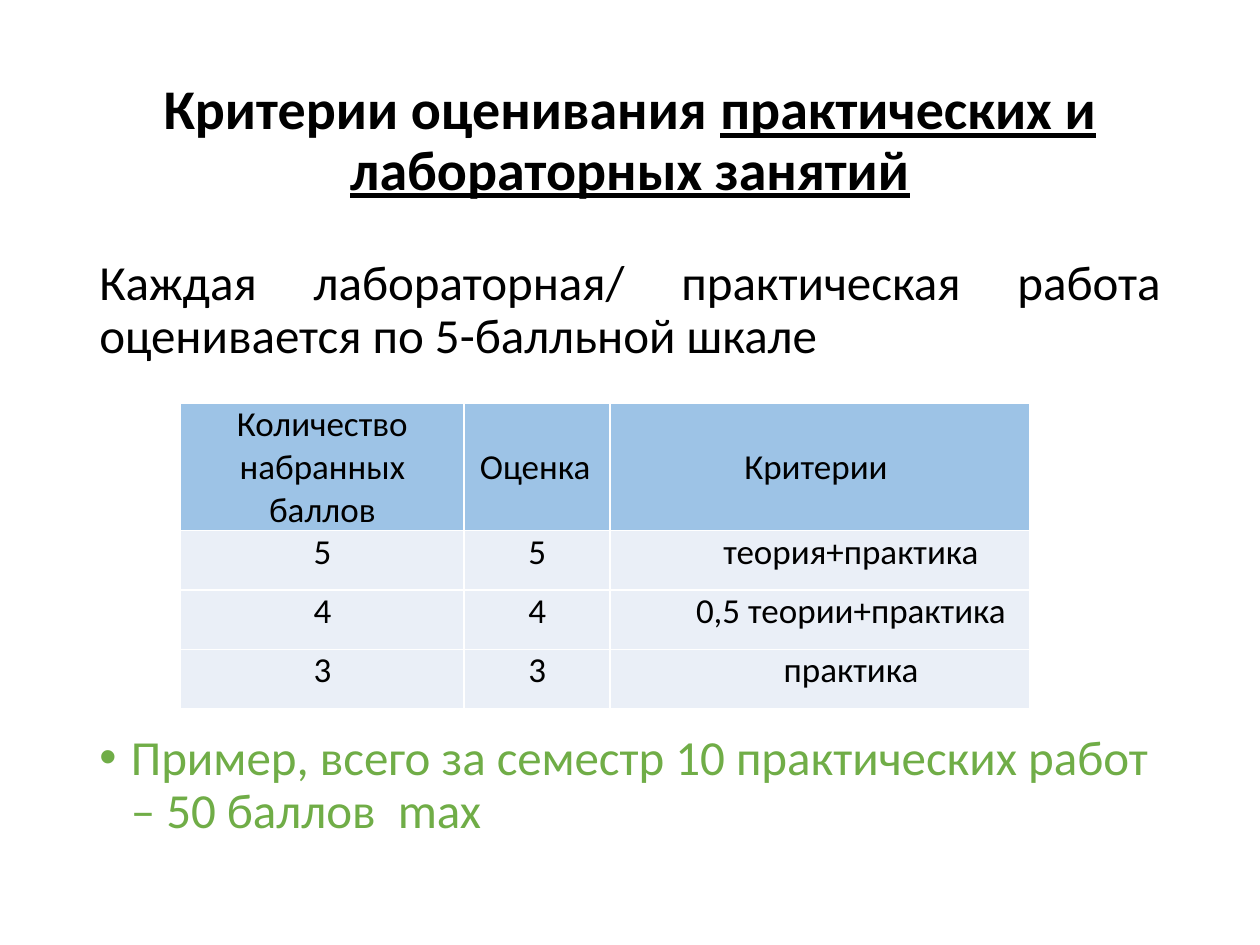
from lxml.etree import SubElement as Sub
from pptx import Presentation
from pptx.dml.color import RGBColor as Rgb
from pptx.enum.text import MSO_ANCHOR as Anchor, PP_ALIGN as Align
from pptx.oxml.ns import qn
from pptx.util import Pt

COLORS = {
    "text": "000000",
    "note": "70AD47",
    "head": "9DC3E6",
    "row": "EAEFF7",
    "line": "FFFFFF",
}
ROWS = [
    ("Количество набранных баллов", " Оценка", "Критерии "),
    ("5", "5", "теория+практика"),
    ("4", "4", "0,5 теории+практика"),
    ("3", "3", "практика"),
]
WIDTHS = (162, 83.5, 239.8)
HEIGHTS = (72.7, 33.9, 33.9, 33.9)


def style(par, size, color="text", align=Align.LEFT, bold=False):
    par.alignment = align
    font = par.font
    font.name, font.size, font.bold = "Calibri", Pt(size), bold
    font.color.rgb = Rgb.from_string(COLORS[color])


def indent(par, left, first):
    props = par._p.get_or_add_pPr()
    props.set("marL", str(Pt(left)))
    props.set("indent", str(Pt(first)))
    return props


def add_box(slide, top, height, anchor=Anchor.TOP):
    box = slide.shapes.add_textbox(Pt(49.7), Pt(top), Pt(620.6), Pt(height))
    frame = box.text_frame
    frame.word_wrap = True
    frame.vertical_anchor = anchor
    return frame


def add_title(slide):
    par = add_box(slide, 28.8, 104.4, Anchor.MIDDLE).paragraphs[0]
    par.line_spacing = 0.9
    style(par, 32, align=Align.CENTER, bold=True)
    par.add_run().text = "Критерии оценивания "
    run = par.add_run()
    run.text = "практических и лабораторных занятий"
    run.font.underline = True


def add_body(slide):
    frame = add_box(slide, 144, 342.7)
    intro, note = frame.paragraphs[0], frame.add_paragraph()
    intro.text = "Каждая лабораторная/ практическая работа оценивается по 5-балльной шкале"
    note.text = "Пример, всего за семестр 10 практических работ – 50 баллов  max"
    intro.line_spacing = note.line_spacing = 0.9
    intro.space_before = Pt(10)
    # The space before the note leaves room for the table
    note.space_before = Pt(211)
    props = indent(note, 18, -18)
    Sub(props, qn("a:buFont"), typeface="Arial")
    Sub(props, qn("a:buChar"), char="•")
    style(intro, 28, align=Align.JUSTIFY)
    style(note, 28, "note")


def add_edges(cell):
    props = cell._tc.get_or_add_tcPr()
    for side in ("lnL", "lnR", "lnT", "lnB"):
        edge = Sub(props, qn(f"a:{side}"), w=str(Pt(1)))
        fill = Sub(edge, qn("a:solidFill"))
        Sub(fill, qn("a:srgbClr"), val=COLORS["line"])


def fill_cell(cell, text, head, col):
    add_edges(cell)
    cell.fill.solid()
    cell.fill.fore_color.rgb = Rgb.from_string(COLORS["head" if head else "row"])
    cell.margin_left = cell.margin_right = Pt(4.5)
    cell.margin_top = cell.margin_bottom = Pt(0)
    cell.vertical_anchor = Anchor.MIDDLE if head else Anchor.TOP
    cell.text = text
    par = cell.text_frame.paragraphs[0]
    style(par, 20, align=Align.LEFT if head and col == 1 else Align.CENTER)
    if col == 2 and not head:
        indent(par, 18, 17.5)


def add_grid(slide):
    frame = slide.shapes.add_table(
        len(ROWS), len(WIDTHS), Pt(103.2), Pt(230.6), Pt(sum(WIDTHS)), Pt(sum(HEIGHTS))
    )
    table = frame.table
    for col, width in zip(table.columns, WIDTHS):
        col.width = Pt(width)
    for row, height in zip(table.rows, HEIGHTS):
        row.height = Pt(height)
    for r, texts in enumerate(ROWS):
        for c, text in enumerate(texts):
            fill_cell(table.cell(r, c), text, r == 0, c)


def main():
    deck = Presentation()
    deck.slide_width, deck.slide_height = Pt(720), Pt(540)
    slide = deck.slides.add_slide(deck.slide_layouts[6])
    add_title(slide)
    add_body(slide)
    add_grid(slide)
    deck.save("out.pptx")


if __name__ == "__main__":
    main()
